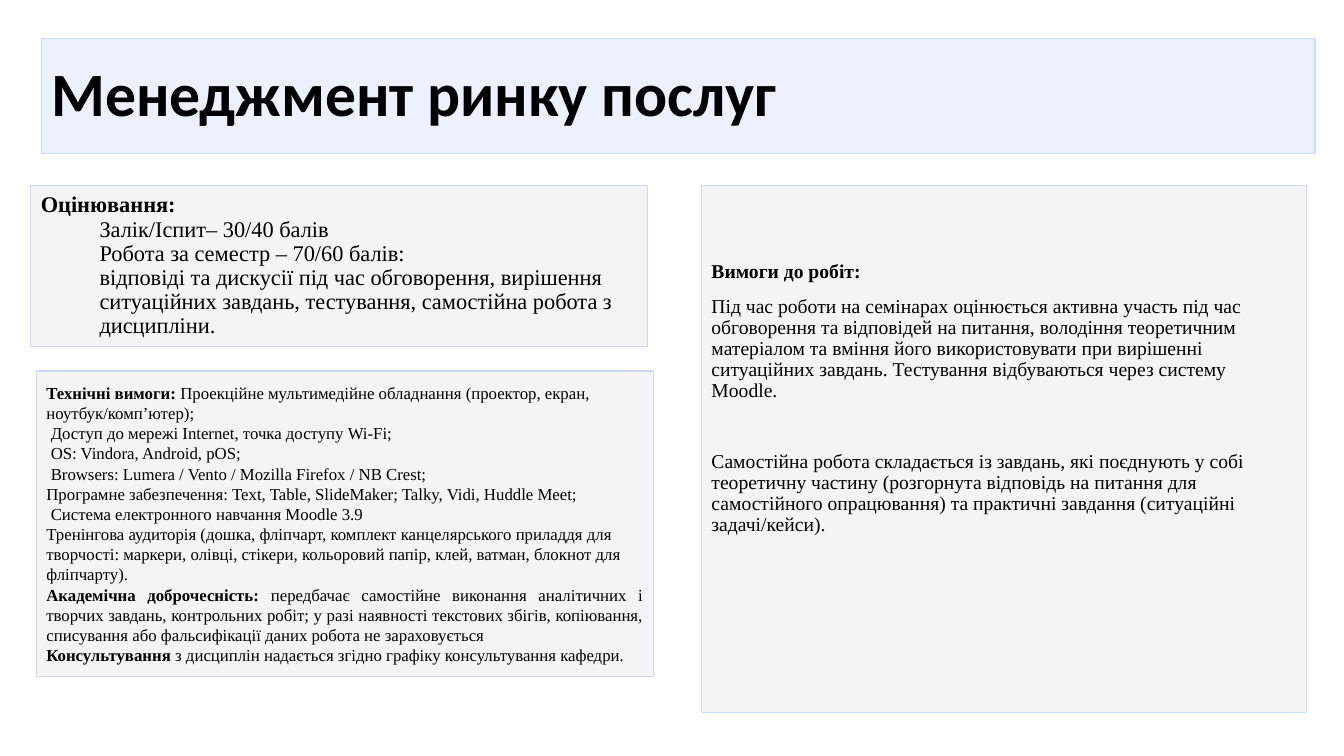
from dataclasses import dataclass

from lxml.etree import SubElement
from pptx import Presentation
from pptx.dml.color import RGBColor
from pptx.enum.shapes import MSO_SHAPE
from pptx.enum.text import MSO_ANCHOR, MSO_AUTO_SIZE, PP_ALIGN
from pptx.oxml.ns import qn
from pptx.util import Cm, Pt


@dataclass(frozen=True)
class Theme:
    text: RGBColor = RGBColor(0x00, 0x00, 0x00)
    outline: RGBColor = RGBColor(0xCD, 0xD9, 0xFF)
    title_fill: RGBColor = RGBColor(0xE5, 0xEB, 0xFF)
    panel_fill: RGBColor = RGBColor(0xF0, 0xF0, 0xF0)
    title_opacity: int = 70
    panel_opacity: int = 69
    title_font: str = "Calibri"
    body_font: str = "Times New Roman"
    title_size: int = 44
    grading_size: int = 16
    assignment_size: int = 14
    technical_size: int = 12


THEME = Theme()


def add_text(frame, text, *, size, lead="", bold=False, font=THEME.body_font,
             align=PP_ALIGN.LEFT, spacing=1.0, before=0, indent=0):
    """Add a paragraph: an optional bold lead followed by the text."""
    para = frame.paragraphs[0]
    if para.runs:
        para = frame.add_paragraph()
    para.alignment = align
    para.line_spacing = spacing
    para.space_before = Pt(before)
    para.space_after = Pt(0)
    if indent:
        para._p.get_or_add_pPr().set("marL", str(Cm(indent)))
    for words, is_bold in ((lead, True), (text, bold)):
        if words:
            span = para.add_run()
            span.text = words
            span.font.name = font
            span.font.size = Pt(size)
            span.font.bold = is_bold
            span.font.color.rgb = THEME.text


def style_box(shape, color, opacity):
    """Give a shape its translucent fill, thin outline and text frame settings."""
    shape.fill.solid()
    shape.fill.fore_color.rgb = color
    color_node = shape._element.spPr.find(qn("a:solidFill"))[0]
    SubElement(color_node, qn("a:alpha")).set("val", str(opacity * 1000))
    shape.line.color.rgb = THEME.outline
    shape.line.width = Pt(0.75)
    frame = shape.text_frame
    frame.word_wrap = True
    frame.auto_size = MSO_AUTO_SIZE.NONE
    frame.vertical_anchor = MSO_ANCHOR.MIDDLE
    return frame


def add_panel(page, box):
    panel = page.shapes.add_shape(MSO_SHAPE.RECTANGLE, *map(Cm, box))
    panel.shadow.inherit = False
    return style_box(panel, THEME.panel_fill, THEME.panel_opacity)


def place_title(page, box):
    title = page.shapes.title
    title.left, title.top, title.width, title.height = map(Cm, box)
    frame = style_box(title, THEME.title_fill, THEME.title_opacity)
    add_text(frame, "Менеджмент ринку послуг", size=THEME.title_size,
             bold=True, font=THEME.title_font, spacing=0.9)


def place_grading(page, box):
    frame = add_panel(page, box)
    add_text(frame, "", lead="Оцінювання:", size=THEME.grading_size, spacing=0.9)
    for text in (
        "Залік/Іспит– 30/40 балів",
        "Робота за семестр – 70/60 балів:",
        "відповіді та дискусії під час обговорення, вирішення ситуаційних "
        "завдань, тестування, самостійна робота з дисципліни.",
    ):
        add_text(frame, text, size=THEME.grading_size, spacing=0.9, indent=1.48)


def place_technical(page, box):
    frame = add_panel(page, box)
    left, justified = PP_ALIGN.LEFT, PP_ALIGN.JUSTIFY
    for lead, text, indent, align in (
        ("Технічні вимоги: ",
         "Проекційне мультимедійне обладнання (проектор, екран, "
         "ноутбук/комп’ютер);", 0, left),
        ("", "Доступ до мережі Internet, точка доступу Wi-Fi;", 0.11, left),
        ("", "OS: Vindora, Android, pOS;", 0.11, left),
        ("", "Browsers: Lumera / Vento / Mozilla Firefox / NB Crest;", 0.11, left),
        ("", "Програмне забезпечення: Text, Table, SlideMaker; Talky, Vidi, "
         "Huddle Meet;", 0, left),
        ("", "Система електронного навчання Moodle 3.9", 0.11, left),
        ("", "Тренінгова аудиторія (дошка, фліпчарт, комплект канцелярського "
         "приладдя для творчості: маркери, олівці, стікери, кольоровий папір, "
         "клей, ватман, блокнот для фліпчарту).", 0, left),
        ("Академічна доброчесність:",
         " передбачає самостійне виконання аналітичних і творчих завдань, "
         "контрольних робіт; у разі наявності текстових збігів, копіювання, "
         "списування або фальсифікації даних робота не зараховується",
         0, justified),
        ("Консультування",
         " з дисциплін надається згідно графіку консультування кафедри.",
         0, justified),
    ):
        add_text(frame, text, lead=lead, size=THEME.technical_size,
                 indent=indent, align=align)


def place_assignments(page, box):
    frame = add_panel(page, box)
    frame.vertical_anchor = MSO_ANCHOR.TOP
    frame.margin_top = Cm(1.85)
    frame.margin_right = Cm(0.5)
    size = THEME.assignment_size
    add_text(frame, "", lead="Вимоги до робіт:", size=size)
    add_text(frame,
             "Під час роботи на семінарах оцінюється активна участь під час "
             "обговорення та відповідей на питання, володіння теоретичним "
             "матеріалом та вміння його використовувати при вирішенні "
             "ситуаційних завдань. Тестування відбуваються через систему Moodle.",
             size=size, spacing=0.9, before=10)
    add_text(frame,
             "Самостійна робота складається із завдань, які поєднують у собі "
             "теоретичну частину (розгорнута відповідь на питання для "
             "самостійного опрацювання) та практичні завдання (ситуаційні "
             "задачі/кейси).",
             size=size, spacing=0.9, before=35)


def main():
    deck = Presentation()
    deck.slide_width, deck.slide_height = Cm(33.87), Cm(19.05)
    page = deck.slides.add_slide(deck.slide_layouts.get_by_name("Title Only"))
    place_title(page, (1.04, 0.98, 32.1, 2.89))
    place_grading(page, (0.78, 4.67, 15.55, 4.07))
    place_technical(page, (0.92, 9.35, 15.55, 7.7))
    place_assignments(page, (17.68, 4.67, 15.25, 13.29))
    deck.save("out.pptx")


if __name__ == "__main__":
    main()
